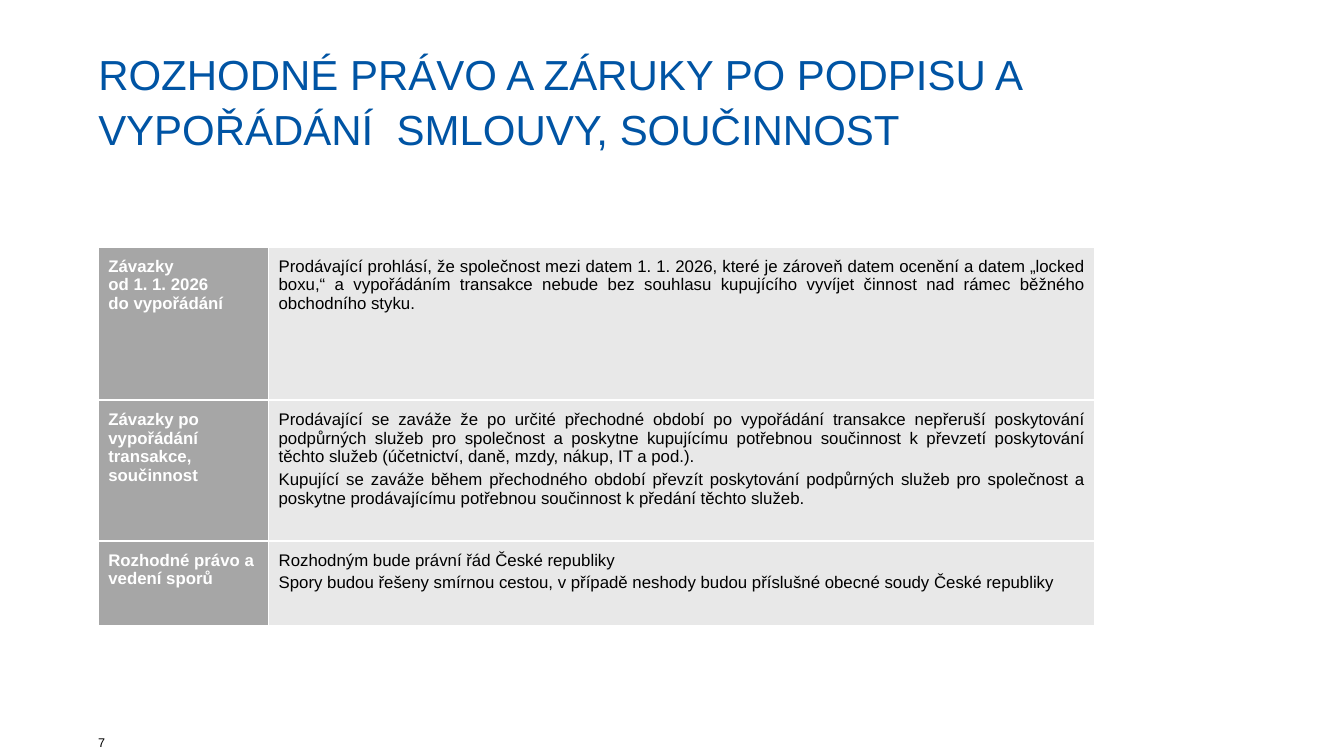
from lxml.etree import SubElement
from pptx import Presentation
from pptx.dml.color import RGBColor
from pptx.enum.text import MSO_ANCHOR, PP_ALIGN
from pptx.oxml.ns import qn
from pptx.util import Inches, Pt

SLIDE_WIDTH, SLIDE_HEIGHT = 26.67, 15
LEFT_MARGIN = 1.95
FONT = "Arial"
COLORS = {"title": "0054A4", "text": "000000", "label": "FFFFFF", "border": "FFFFFF",
          "label_fill": "A6A6A6", "body_fill": "E8E8E8"}

TITLE = "ROZHODNÉ PRÁVO A ZÁRUKY PO PODPISU A VYPOŘÁDÁNÍ  SMLOUVY, SOUČINNOST"
PAGE_NUMBER = "7"
COMMITMENTS = [
    ("Závazky\vod 1. 1. 2026\vdo vypořádání", [
        "Prodávající prohlásí, že společnost mezi datem 1. 1. 2026, které je zároveň datem "
        "ocenění a datem „locked boxu,“ a vypořádáním transakce nebude bez souhlasu "
        "kupujícího vyvíjet činnost nad rámec běžného obchodního styku.",
    ]),
    ("Závazky po vypořádání transakce, součinnost", [
        "Prodávající se zaváže že po určité přechodné období po vypořádání transakce nepřeruší "
        "poskytování podpůrných služeb pro společnost a poskytne kupujícímu potřebnou "
        "součinnost k převzetí poskytování těchto služeb (účetnictví, daně, mzdy, nákup, IT a pod.).",
        "Kupující se zaváže během přechodného období převzít poskytování podpůrných služeb pro "
        "společnost a poskytne prodávajícímu potřebnou součinnost k předání těchto služeb.",
    ]),
    ("Rozhodné právo a vedení sporů", [
        "Rozhodným bude právní řád České republiky",
        "Spory budou řešeny smírnou cestou, v případě neshody budou příslušné obecné soudy "
        "České republiky",
    ]),
]
COLUMN_WIDTHS = [3.38, 16.39]
ROW_HEIGHTS = [3.04, 2.79, 1.68]
TABLE_TOP = 4.9
CELL_MARGIN = 0.2


def add_run(paragraph, text, size, color, bold=False):
    """Add text to the paragraph, with a line break at each vertical tab."""
    for index, line in enumerate(text.split("\v")):
        if index:
            paragraph.add_line_break()
        run = paragraph.add_run()
        run.text = line
        run.font.name = FONT
        run.font.size = Pt(size)
        run.font.bold = bold
        run.font.color.rgb = RGBColor.from_string(COLORS[color])


def set_margins(holder, margin):
    holder.margin_left = holder.margin_top = Inches(margin)
    holder.margin_right = holder.margin_bottom = Inches(margin)


def add_text_box(slide, top, width, height, text, size, color, line_spacing=1.0):
    box = slide.shapes.add_textbox(Inches(LEFT_MARGIN), Inches(top), Inches(width), Inches(height))
    frame = box.text_frame
    frame.word_wrap = True
    frame.vertical_anchor = MSO_ANCHOR.MIDDLE
    set_margins(frame, 0)
    paragraph = frame.paragraphs[0]
    paragraph.line_spacing = line_spacing
    add_run(paragraph, text, size, color)


def set_borders(cell, widths):
    """Draw the borders; widths maps each side's tag to points."""
    properties = cell._tc.get_or_add_tcPr()
    for index, (side, width) in enumerate(widths.items()):
        line = properties.makeelement(qn(f"a:{side}"), {"w": str(Pt(width))})
        fill = SubElement(line, qn("a:solidFill"))
        SubElement(fill, qn("a:srgbClr"), val=COLORS["border"])
        properties.insert(index, line)


def fill_cell(cell, texts, fill, color, bold, alignment):
    cell.fill.solid()
    cell.fill.fore_color.rgb = RGBColor.from_string(COLORS[fill])
    set_margins(cell, CELL_MARGIN)
    cell.vertical_anchor = MSO_ANCHOR.TOP
    frame = cell.text_frame
    for index, text in enumerate(texts):
        paragraph = frame.add_paragraph() if index else frame.paragraphs[0]
        paragraph.alignment = alignment
        paragraph.space_before = Pt(3 if index else 0)
        paragraph.space_after = Pt(3)
        add_run(paragraph, text, 24, color, bold)


def add_commitment_table(slide):
    table = slide.shapes.add_table(
        len(ROW_HEIGHTS), len(COLUMN_WIDTHS), Inches(LEFT_MARGIN), Inches(TABLE_TOP),
        Inches(sum(COLUMN_WIDTHS)), Inches(sum(ROW_HEIGHTS))).table
    table.first_row = table.horz_banding = False
    for column, width in zip(table.columns, COLUMN_WIDTHS):
        column.width = Inches(width)
    last = len(COMMITMENTS) - 1
    for index, (label, body) in enumerate(COMMITMENTS):
        table.rows[index].height = Inches(ROW_HEIGHTS[index])
        label_cell, body_cell = table.cell(index, 0), table.cell(index, 1)
        fill_cell(label_cell, [label], "label_fill", "label", True, PP_ALIGN.LEFT)
        fill_cell(body_cell, body, "body_fill", "text", False, PP_ALIGN.JUSTIFY)
        widths = {"lnL": 1, "lnR": 1, "lnT": 3 if index else 1, "lnB": 3 if index < last else 1}
        for cell in (label_cell, body_cell):
            set_borders(cell, widths)


def main():
    presentation = Presentation()
    presentation.slide_width = Inches(SLIDE_WIDTH)
    presentation.slide_height = Inches(SLIDE_HEIGHT)
    slide = presentation.slides.add_slide(presentation.slide_layouts[6])
    add_text_box(slide, 0.8, 19.25, 2.32, TITLE, 60, "title", line_spacing=1.1)
    add_text_box(slide, 14.47, 2.76, 0.53, PAGE_NUMBER, 18, "text")
    add_commitment_table(slide)
    presentation.save("out.pptx")


if __name__ == "__main__":
    main()
